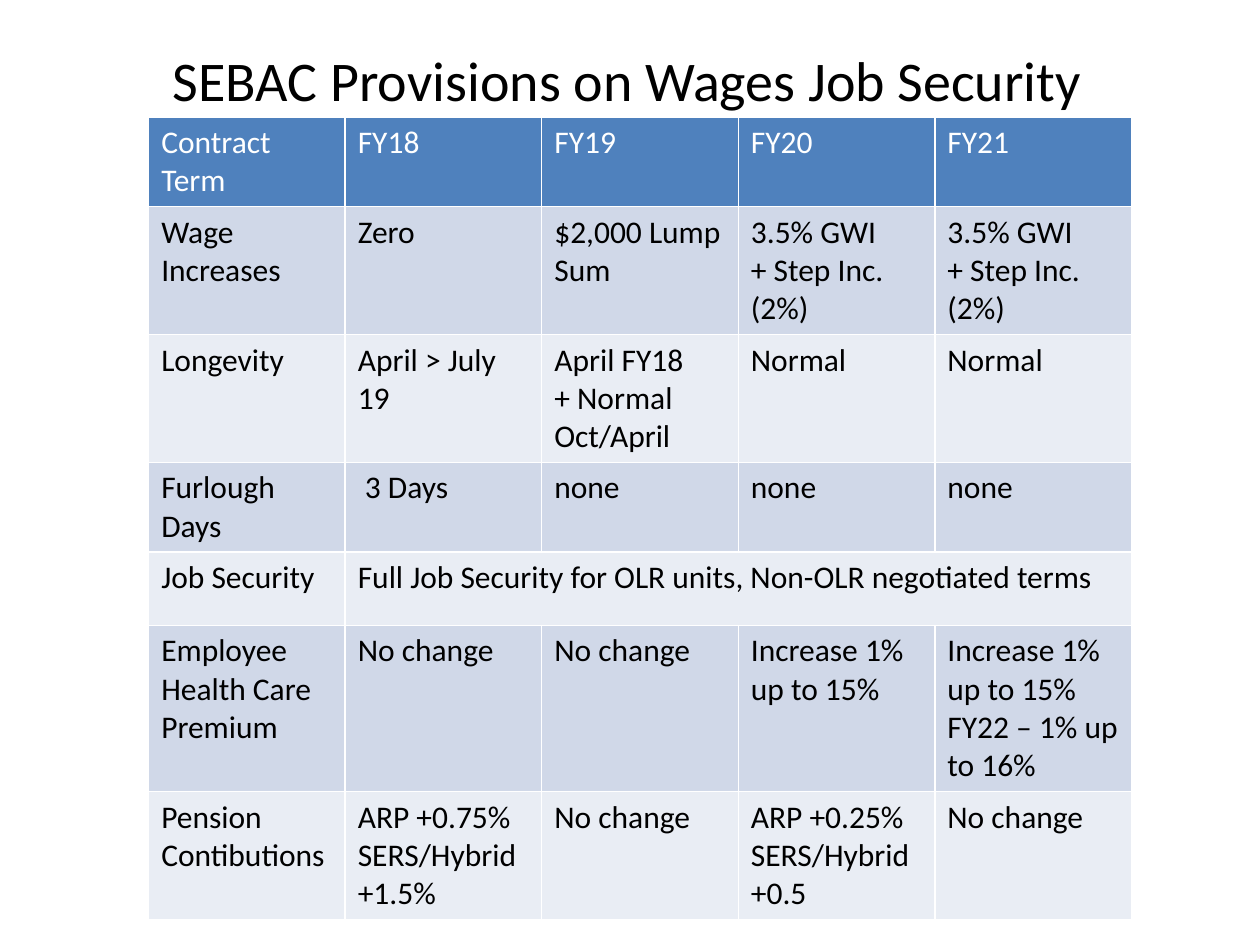
from pptx import Presentation
from pptx.dml.color import RGBColor
from pptx.enum.text import MSO_ANCHOR, PP_ALIGN
from pptx.util import Inches, Pt

CENTER, MIDDLE = PP_ALIGN.CENTER, MSO_ANCHOR.MIDDLE
FONT = "Calibri"
HUES = {"head": "4F81BD", "odd": "D0D8E8", "even": "E9EDF4",
        "dark": "000000", "light": "FFFFFF"}

# Each row: height in inches, then cells; a line break starts a paragraph
STEP = "3.5% GWI\n+ Step Inc. (2%)"
RISE = "Increase 1% up to 15%"
SAME = "No change"
ROWS = [
    (0.58, ["Contract Term", "FY18", "FY19", "FY20", "FY21"]),
    (0.82, ["Wage Increases", "Zero", "$2,000 Lump Sum", STEP, STEP]),
    (0.82, ["Longevity", "April > July 19",
            "April FY18\n+ Normal Oct/April", "Normal", "Normal"]),
    (0.58, ["Furlough Days", " 3 Days", "none", "none", "none"]),
    (0.58, ["Job Security",
            "Full Job Security for OLR units, Non-OLR negotiated terms"]),
    (1.32, ["Employee Health Care Premium", SAME, SAME, RISE,
            RISE + "\nFY22 – 1% up to 16%"]),
    (0.58, ["Pension\nContibutions", "ARP +0.75%\nSERS/Hybrid\n+1.5%", SAME,
            "ARP +0.25%\nSERS/Hybrid\n+0.5", SAME]),
]
COLS = len(ROWS[0][1])


def color(name):
    return RGBColor.from_string(HUES[name])


def write(frame, text, size, hue, align=None):
    for i, line in enumerate(text.split("\n")):
        para = frame.add_paragraph() if i else frame.paragraphs[0]
        para.alignment = align
        run = para.add_run()
        run.text = line
        font = run.font
        font.name, font.size, font.bold = FONT, Pt(size), False
        font.color.rgb = color(hue)


def add_title(slide, box, text):
    title = slide.shapes.title
    title.left, title.top, title.width, title.height = map(Inches, box)
    title.text_frame.vertical_anchor = MIDDLE
    write(title.text_frame, text, 32, "dark", CENTER)


def add_terms(slide, box):
    table = slide.shapes.add_table(len(ROWS), COLS, *map(Inches, box)).table
    for col in table.columns:
        col.width = Inches(box[2] / COLS)
    for r, (height, texts) in enumerate(ROWS):
        table.rows[r].height = Inches(height)
        fill = "head" if r == 0 else "odd" if r % 2 else "even"
        for c in range(COLS):
            cell = table.cell(r, c)
            cell.fill.solid()
            cell.fill.fore_color.rgb = color(fill)
        # A short row stretches its last cell to the right edge
        last = len(texts) - 1
        if last < COLS - 1:
            table.cell(r, last).merge(table.cell(r, COLS - 1))
        for c, text in enumerate(texts):
            write(table.cell(r, c).text_frame, text, 18,
                  "dark" if r else "light")


def main():
    deck = Presentation()
    deck.slide_width, deck.slide_height = Inches(10), Inches(7.5)
    slide = deck.slides.add_slide(deck.slide_layouts[5])
    add_title(slide, (0.48, 0, 9, 1.25),
              "SEBAC Provisions on Wages Job Security")
    add_terms(slide, (1.18, 0.93, 7.8, sum(row[0] for row in ROWS)))
    deck.save("out.pptx")


if __name__ == "__main__":
    main()
